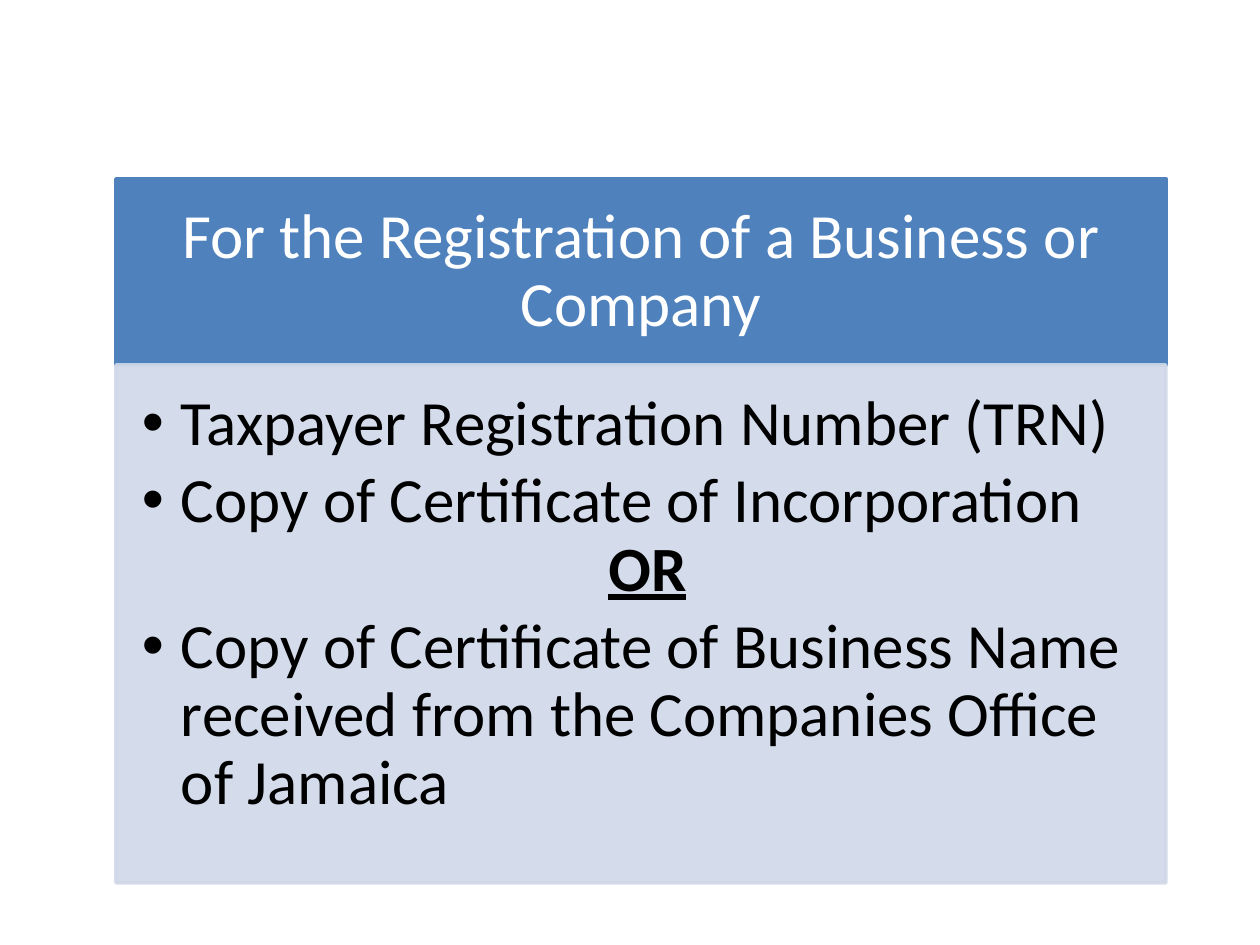
"""Build a slide listing the papers needed to register a business or company."""
import dataclasses
import typing

import lxml.etree
import pptx
import pptx.dml.color
import pptx.enum.text
import pptx.oxml.ns
import pptx.util

SCALE = 914400 / 126
ALIGN = pptx.enum.text.PP_ALIGN
ANCHOR = pptx.enum.text.MSO_ANCHOR


@dataclasses.dataclass(frozen=True)
class Theme:
    font: str = "Calibri"
    size: float = 36
    edge: float = 2
    lines: float = 0.9
    gap: float = 5.4
    blue: str = "4F81BD"
    pale: str = "D0D8E8"
    white: str = "FFFFFF"
    black: str = "000000"


@dataclasses.dataclass(frozen=True)
class Item:
    text: str
    align: ALIGN = ALIGN.LEFT
    left: int = 39
    hang: int = -39
    bullet: bool = True
    strong: bool = False
    gap: float = 0


@dataclasses.dataclass(frozen=True)
class Panel:
    top: int
    height: int
    inset: typing.Tuple[int, int, int, int]
    fill: str
    ink: str
    anchor: ANCHOR
    items: typing.Tuple[Item, ...]
    alpha: int = 100


THEME = Theme()
LEFT, WIDTH = 116, 1050
TOP, HEAD, BODY = 179, 186, 518

PANELS = (
    Panel(TOP, HEAD, (35, 20, 35, 20), THEME.blue, THEME.white, ANCHOR.MIDDLE, (
        Item("For the Registration of a Business or Company", ALIGN.CENTER, 0, 0, False),
    )),
    Panel(TOP + HEAD, BODY, (26, 26, 35, 40), THEME.pale, THEME.black, ANCHOR.TOP, (
        Item("Taxpayer Registration Number (TRN)", gap=THEME.gap),
        Item("Copy of Certificate of Incorporation"),
        Item("OR", ALIGN.CENTER, 22, 0, False, True, THEME.gap),
        Item("Copy of Certificate of Business Name received from the Companies Office of Jamaica"),
    ), 90),
)


def px(count: int) -> pptx.util.Emu:
    return pptx.util.Emu(round(count * SCALE))


def tint(code: str) -> pptx.dml.color.RGBColor:
    return pptx.dml.color.RGBColor.from_string(code)


def fade(shape: typing.Any, alpha: int) -> None:
    for node in shape._element.spPr.iter(pptx.oxml.ns.qn("a:srgbClr")):
        lxml.etree.SubElement(node, pptx.oxml.ns.qn("a:alpha"), val=str(alpha * 1000))


def write(para: typing.Any, item: Item, ink: str) -> None:
    para.alignment = item.align
    para.line_spacing = THEME.lines
    para.space_before = pptx.util.Pt(0)
    para.space_after = pptx.util.Pt(item.gap)
    props = para._p.get_or_add_pPr()
    props.set("marL", str(px(item.left)))
    props.set("indent", str(px(item.hang)))
    if item.bullet:
        lxml.etree.SubElement(props, pptx.oxml.ns.qn("a:buChar"), char="•")
    else:
        lxml.etree.SubElement(props, pptx.oxml.ns.qn("a:buNone"))
    run = para.add_run()
    run.text = item.text
    run.font.name = THEME.font
    run.font.size = pptx.util.Pt(THEME.size)
    run.font.bold = item.strong
    run.font.underline = item.strong
    run.font.color.rgb = tint(ink)


def draw(shape: typing.Any, panel: Panel) -> None:
    shape.left, shape.top = px(LEFT), px(panel.top)
    shape.width, shape.height = px(WIDTH), px(panel.height)
    shape.fill.solid()
    shape.fill.fore_color.rgb = tint(panel.fill)
    shape.line.color.rgb = tint(panel.fill)
    shape.line.width = pptx.util.Pt(THEME.edge)
    if panel.alpha < 100:
        fade(shape, panel.alpha)
    frame = shape.text_frame
    frame.word_wrap = True
    frame.auto_size = pptx.enum.text.MSO_AUTO_SIZE.NONE
    frame.vertical_anchor = panel.anchor
    (frame.margin_left, frame.margin_top,
     frame.margin_right, frame.margin_bottom) = map(px, panel.inset)
    for index, item in enumerate(panel.items):
        para = frame.add_paragraph() if index else frame.paragraphs[0]
        write(para, item, panel.ink)


def main() -> None:
    deck = pptx.Presentation()
    deck.slide_width, deck.slide_height = px(1260), px(945)
    slide = deck.slides.add_slide(deck.slide_layouts[1])
    for shape, panel in zip(slide.placeholders, PANELS):
        draw(shape, panel)
    deck.save("out.pptx")


if __name__ == "__main__":
    main()
